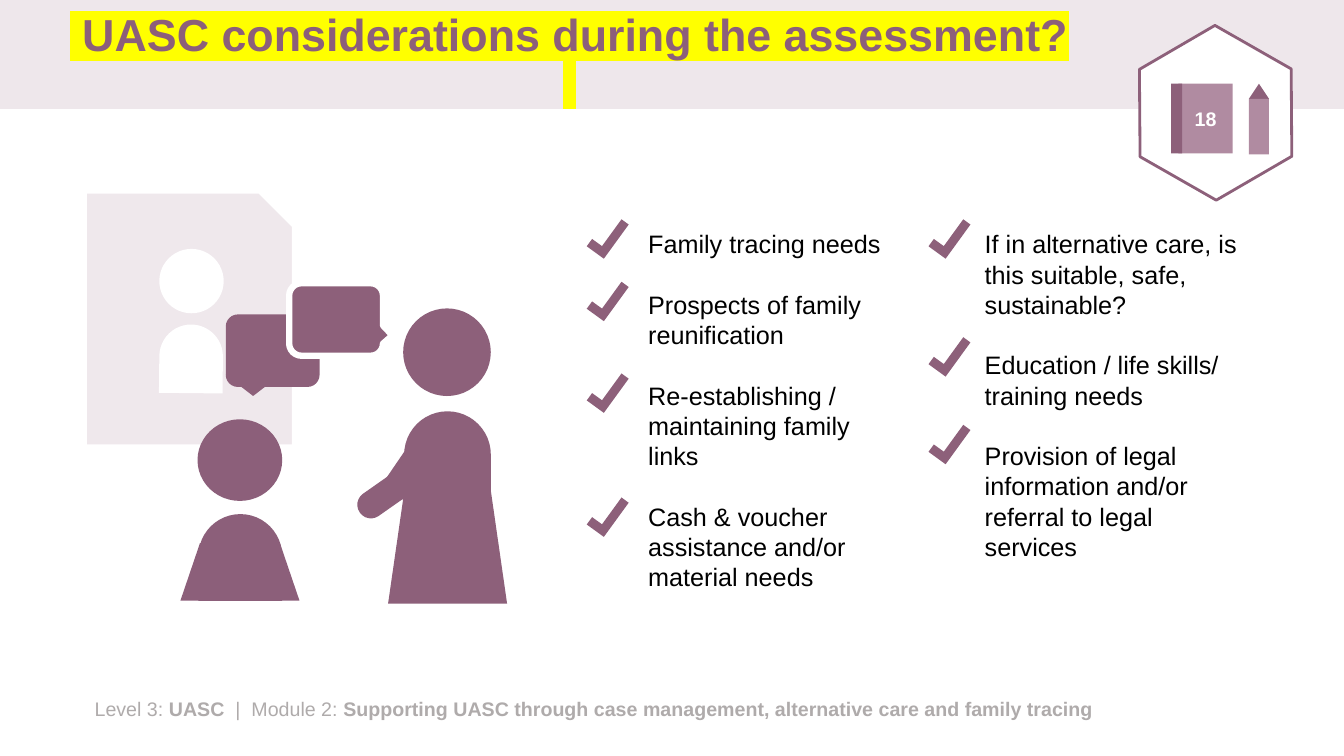
from dataclasses import dataclass
from typing import Optional

import pptx
import pptx.dml.color
import pptx.enum.shapes
import pptx.enum.text
import pptx.oxml
import pptx.oxml.ns
import pptx.util

Pt = pptx.util.Pt
RGBColor = pptx.dml.color.RGBColor
Form = pptx.enum.shapes.MSO_SHAPE
Align = pptx.enum.text.PP_ALIGN
Anchor = pptx.enum.text.MSO_ANCHOR

PLUM = RGBColor(0x8D, 0x60, 0x7A)
TITLE_PLUM = RGBColor(0x8C, 0x5F, 0x7A)
MAUVE = RGBColor(0xB0, 0x8B, 0xA1)
BAND = RGBColor(0xEE, 0xE7, 0xEB)
PAPER = RGBColor(0xEF, 0xE8, 0xEC)
WHITE = RGBColor(0xFF, 0xFF, 0xFF)
BLACK = RGBColor(0, 0, 0)
GREY = RGBColor(0xAF, 0xAB, 0xAB)
YELLOW = RGBColor(0xFF, 0xFF, 0)

NAMESPACE = pptx.oxml.ns.nsdecls("a")
ROUND_TOP = (0.5, 0)
ARM = (0.49, 0)

@dataclass(frozen=True)
class Box:
    left: float
    top: float
    width: float
    height: float

@dataclass(frozen=True)
class Part:
    form: Form
    box: Box
    fill: RGBColor = PLUM
    rotation: float = 0
    adjustments: tuple[float, ...] = ()
    line: Optional[RGBColor] = None
    line_width: float = 0
    text: str = ""

@dataclass(frozen=True)
class Checklist:
    placeholder: int
    box: Box
    tick_left: float
    tick_tops: tuple[float, ...]
    items: tuple[str, ...]

CASE_FILE = (
    Part(Form.SNIP_1_RECTANGLE, Box(59, 135.4, 152.6, 185), PAPER, line=WHITE, line_width=6),
    Part(Form.ROUND_2_SAME_RECTANGLE, Box(113.8, 231.8, 45.4, 49), WHITE, 0.6, ROUND_TOP),
    Part(Form.OVAL, Box(113.8, 177.8, 46, 46), WHITE, 0.6),
)
CASEWORKER = (
    Part(Form.ROUND_2_SAME_RECTANGLE, Box(281.5, 312.5, 19.4, 47.5), PLUM, 214.3, ARM),
    Part(Form.ROUND_2_SAME_RECTANGLE, Box(260.6, 340.6, 19.4, 32.4), PLUM, 235, ARM),
    Part(Form.FLOWCHART_MANUAL_OPERATION, Box(277.2, 313.2, 85, 118), PLUM, 180),
    Part(Form.ROUND_2_SAME_RECTANGLE, Box(288.7, 293.8, 61.9, 136), PLUM, 0, ROUND_TOP),
    Part(Form.OVAL, Box(288, 220.3, 62.6, 62.6)),
)
CHILD = (
    Part(Form.TRAPEZOID, Box(128.9, 388, 85, 41), TITLE_PLUM, 0, (0.34,)),
    Part(Form.ROUND_2_SAME_RECTANGLE, Box(141.8, 367.2, 59.8, 62), TITLE_PLUM, 0, ROUND_TOP),
    Part(Form.OVAL, Box(141.1, 299.5, 60.5, 58.3), TITLE_PLUM),
)
BUBBLES = (
    Part(Form.ROUNDED_RECTANGULAR_CALLOUT, Box(161.3, 224.6, 67, 51.8)),
    Part(Form.ROUNDED_RECTANGULAR_CALLOUT, Box(206.6, 202.3, 67, 51.8),
         adjustments=(0.6, 0.22, 0.17), line=WHITE, line_width=4.5),
)
WORKBOOK_BADGE = (
    Part(Form.HEXAGON, Box(805.7, 26.6, 125.3, 108), WHITE, 29.7, (0.29,), PLUM, 2),
    Part(Form.RECTANGLE, Box(841.7, 59.8, 38.9, 49.7), MAUVE, text="18"),
    Part(Form.RECTANGLE, Box(836.6, 59.8, 7.9, 49.7)),
    Part(Form.ISOSCELES_TRIANGLE, Box(892.1, 59.8, 14.4, 10.8)),
    Part(Form.RECTANGLE, Box(892.1, 70.6, 14.4, 39.6), MAUVE),
)
CHECKLISTS = (
    Checklist(1, Box(455.8, 159.8, 198, 269.3), 419, (160.6, 205.2, 270.7, 359.3), (
        "Family tracing needs",
        "Prospects of family reunification",
        "Re-establishing / maintaining family links ",
        "Cash & voucher assistance and/or material needs")),
    Checklist(2, Box(696.2, 159.8, 198, 247), 663.1, (160.6, 244.8, 307.4), (
        "If in alternative care, is this suitable, safe, sustainable?",
        "Education / life skills/ training needs",
        "Provision of legal information and/or referral to legal services")),
)
FOOTER_RUNS = (
    ("Level 3: ", False),
    ("UASC", True),
    ("  |  Module 2: ", False),
    ("Supporting UASC through case management, alternative care and family tracing", True),
)

def add_run(paragraph, text: str, size: float, color: RGBColor, bold: bool = False):
    run = paragraph.add_run()
    run.text = text
    run.font.name = FONT
    run.font.size = Pt(size)
    run.font.bold = bold
    run.font.color.rgb = color
    return run

FONT = "Arial"

def draw_part(shapes, part: Part) -> None:
    box = part.box
    shape = shapes.add_shape(
        part.form, Pt(box.left), Pt(box.top), Pt(box.width), Pt(box.height))
    shape.shadow.inherit = False
    shape.rotation = part.rotation
    for index, value in enumerate(part.adjustments):
        shape.adjustments[index] = value
    shape.fill.solid()
    shape.fill.fore_color.rgb = part.fill
    if part.line is None:
        shape.line.fill.background()
    else:
        shape.line.color.rgb = part.line
        shape.line.width = Pt(part.line_width)
    if part.text:
        shape.text_frame.vertical_anchor = Anchor.MIDDLE
        paragraph = shape.text_frame.paragraphs[0]
        paragraph.alignment = Align.CENTER
        add_run(paragraph, part.text, 14, WHITE, bold=True)

def draw_group(slide, parts: tuple[Part, ...]) -> None:
    group = slide.shapes.add_group_shape()
    for part in parts:
        draw_part(group.shapes, part)

def prepare_frame(shape, box: Box, anchor: Anchor):
    """Place a text shape and return its wrapping, fixed-size frame."""
    shape.left, shape.top = Pt(box.left), Pt(box.top)
    shape.width, shape.height = Pt(box.width), Pt(box.height)
    frame = shape.text_frame
    frame.word_wrap = True
    frame.auto_size = pptx.enum.text.MSO_AUTO_SIZE.NONE
    frame.vertical_anchor = anchor
    return frame

def write_title(slide) -> None:
    title = slide.shapes.title
    slide.shapes.element.append(title.element)
    frame = prepare_frame(title, Box(40.3, 9.4, 733, 68.4), Anchor.MIDDLE)
    paragraph = frame.paragraphs[0]
    paragraph.alignment = Align.CENTER
    paragraph.line_spacing = 0.9
    run = add_run(paragraph, " UASC considerations during the assessment?  ",
                  32, TITLE_PLUM, bold=True)
    fill = run._r.find(".//" + pptx.oxml.ns.qn("a:solidFill"))
    fill.addnext(pptx.oxml.parse_xml(
        f'<a:highlight {NAMESPACE}><a:srgbClr val="{YELLOW}"/></a:highlight>'))

def write_checklist(slide, checklist: Checklist) -> None:
    body = slide.placeholders[checklist.placeholder]
    frame = prepare_frame(body, checklist.box, Anchor.TOP)
    for index, item in enumerate(checklist.items):
        paragraph = frame.add_paragraph() if index else frame.paragraphs[0]
        properties = paragraph._p.get_or_add_pPr()
        properties.set("marL", "0")
        properties.set("indent", "0")
        properties.append(pptx.oxml.parse_xml(f"<a:buNone {NAMESPACE}/>"))
        paragraph.space_before = Pt(0)
        paragraph.space_after = Pt(21.6)
        add_run(paragraph, item, 18, BLACK)
    for top in checklist.tick_tops:
        tick_box = Box(checklist.tick_left, top, 30.2, 15.1)
        draw_part(slide.shapes, Part(Form.CORNER, tick_box, PLUM, 306, (0.42, 0.43)))

def write_footer(slide) -> None:
    footer = slide.shapes.add_textbox(0, 0, 0, 0)
    frame = prepare_frame(footer, Box(60.5, 494.6, 817.2, 24.5), Anchor.TOP)
    for text, bold in FOOTER_RUNS:
        add_run(frame.paragraphs[0], text, 14, GREY, bold)

def main() -> None:
    presentation = pptx.Presentation()
    presentation.slide_width, presentation.slide_height = Pt(960), Pt(540)
    slide = presentation.slides.add_slide(presentation.slide_layouts[3])
    draw_part(slide.shapes, Part(Form.RECTANGLE, Box(0, 0, 960, 77.8), BAND))
    write_footer(slide)
    draw_group(slide, CASE_FILE)
    write_title(slide)
    for parts in (CASEWORKER, CHILD, BUBBLES, WORKBOOK_BADGE):
        draw_group(slide, parts)
    for checklist in CHECKLISTS:
        write_checklist(slide, checklist)
    presentation.save("out.pptx")

if __name__ == "__main__":
    main()
